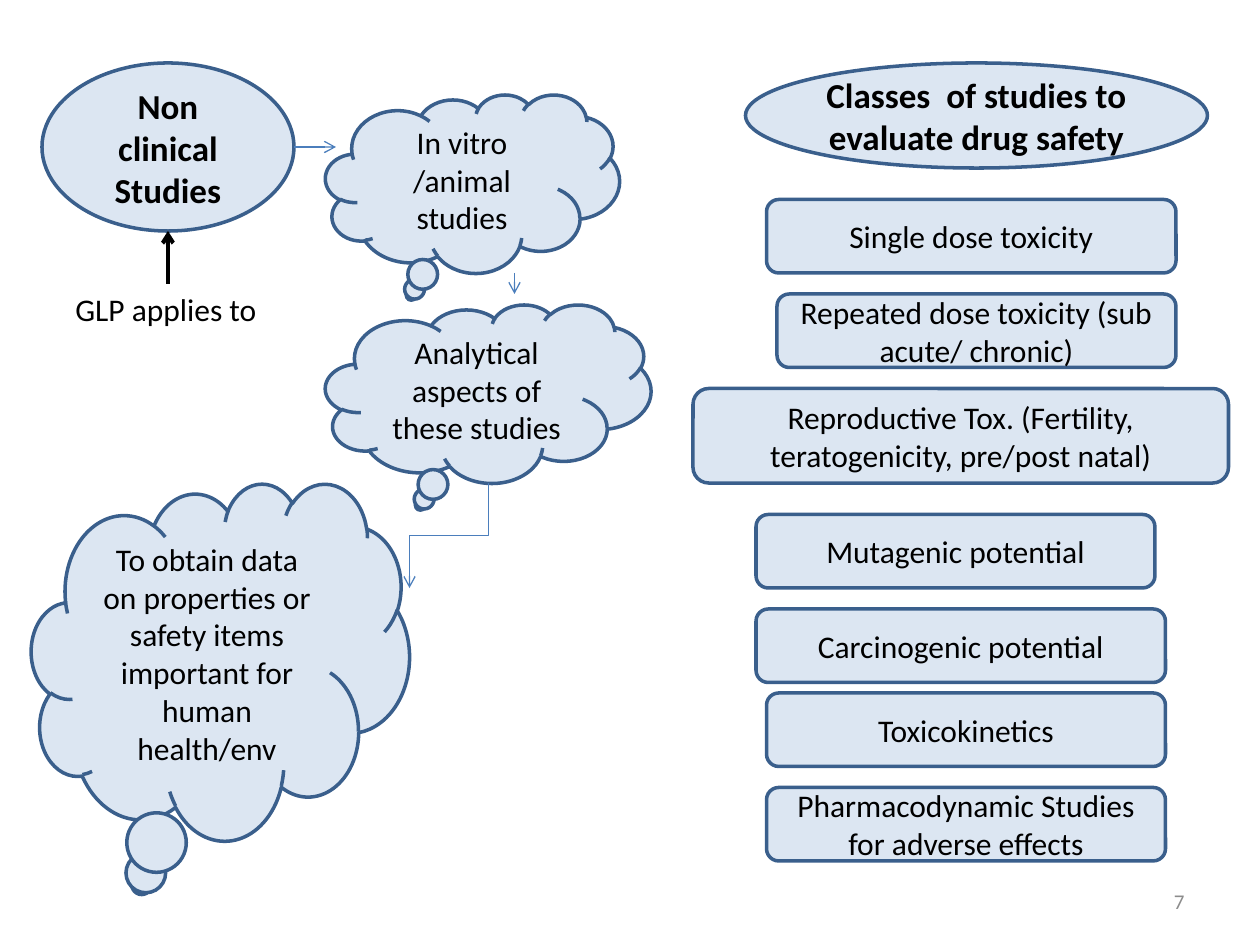
import pptx
import pptx.util
import pptx.dml.color
import pptx.enum.shapes
import pptx.enum.text
import pptx.oxml
from pptx.oxml.ns import nsdecls

Pt = pptx.util.Pt
SHAPE = pptx.enum.shapes.MSO_SHAPE
LINK = pptx.enum.shapes.MSO_CONNECTOR
ALIGN = pptx.enum.text.PP_ALIGN
ANCHOR = pptx.enum.text.MSO_ANCHOR

PALE, NAVY, BLUE, BLACK, GREY = "DCE6F2", "3A5F8C", "4B7EBC", "000000", "8C8C8C"
HEADING = {"size": Pt(20), "bold": True}
BODY = {"size": Pt(18)}

# text, left, top, width, height
HEADINGS = [
    ("Non clinical Studies", 24, 36, 144, 96),
    ("Classes  of studies to evaluate drug safety", 426, 36, 264, 60),
]
CLOUDS = [
    ("Analytical aspects of these studies", 186, 174, 186, 102),
    ("To obtain data on properties or safety items important for human health/env",
     18, 276, 216, 204),
    ("In vitro /animal studies", 186, 54, 168, 102),
]
STUDY_CLASSES = [
    ("Single dose toxicity", 438, 114, 234, 42),
    ("Repeated dose toxicity (sub acute/ chronic)", 444, 168, 228, 42),
    ("Reproductive Tox. (Fertility, teratogenicity, pre/post natal)", 396, 222, 306, 54),
    ("Mutagenic potential", 432, 294, 228, 42),
    ("Carcinogenic potential", 432, 348, 234, 42),
    ("Toxicokinetics", 438, 396, 228, 42),
    ("Pharmacodynamic Studies for adverse effects", 438, 450, 228, 42),
]
# start x, start y, end x, end y, colour, line width
ARROWS = [
    (168, 84, 192, 84, BLUE, 0.75),
    (294, 156, 294, 168, BLUE, 0.75),
    (96, 162, 96, 132, BLACK, 2.25),
]
ELBOW = (279, 276, 234, 336)


def rgb(value):
    return pptx.dml.color.RGBColor.from_string(value)


def write(sp, text, font, align, anchor, color=BLACK):
    tf = sp.text_frame
    tf.word_wrap = True
    tf.vertical_anchor = anchor
    p = tf.paragraphs[0]
    p.alignment = align
    r = p.add_run()
    r.text = text
    for name, value in {"name": "Calibri", **font}.items():
        setattr(r.font, name, value)
    r.font.color.rgb = rgb(color)


def add_box(s, kind, font, text, *place):
    sp = s.shapes.add_shape(kind, *map(Pt, place))
    sp.shadow.inherit = False
    sp.fill.solid()
    sp.fill.fore_color.rgb = rgb(PALE)
    sp.line.color.rgb = rgb(NAVY)
    sp.line.width = Pt(2)
    write(sp, text, font, ALIGN.CENTER, ANCHOR.MIDDLE)


def add_label(s, text, place, *style):
    write(s.shapes.add_textbox(*map(Pt, place)), text, *style)


def add_arrow(s, x1, y1, x2, y2, color=BLUE, width=0.75, kind=LINK.STRAIGHT):
    cn = s.shapes.add_connector(kind, *map(Pt, (x1, y1, x2, y2)))
    cn.line.color.rgb = rgb(color)
    cn.line.width = Pt(width)
    cn.line._get_or_add_ln().append(
        pptx.oxml.parse_xml(f'<a:tailEnd {nsdecls("a")} type="arrow"/>'))
    cn._element.spPr.append(pptx.oxml.parse_xml(f'<a:effectLst {nsdecls("a")}/>'))
    return cn


def add_down_elbow(s, x1, y1, x2, y2):
    """Elbow that leaves and arrives vertically: a horizontal one turned 90 degrees."""
    cx, cy = (x1 + x2) / 2, (y1 + y2) / 2
    half_w, half_h = (y2 - y1) / 2, (x1 - x2) / 2
    cn = add_arrow(s, cx - half_w, cy - half_h, cx + half_w, cy + half_h, kind=LINK.ELBOW)
    cn._element.spPr.xfrm.set("rot", "5400000")


def main():
    prs = pptx.Presentation()
    prs.slide_width, prs.slide_height = Pt(720), Pt(540)
    s = prs.slides.add_slide(prs.slide_layouts[6])
    for kind, font, boxes in [
        (SHAPE.OVAL, HEADING, HEADINGS),
        (SHAPE.CLOUD_CALLOUT, BODY, CLOUDS),
        (SHAPE.ROUNDED_RECTANGLE, BODY, STUDY_CLASSES),
    ]:
        for box in boxes:
            add_box(s, kind, font, *box)
    for arrow in ARROWS:
        add_arrow(s, *arrow)
    add_down_elbow(s, *ELBOW)
    add_label(s, "GLP applies to", (36, 162, 120, 29), BODY, ALIGN.LEFT, ANCHOR.TOP)
    add_label(s, "7", (516, 500.5, 168, 28.75), {"size": Pt(12)},
              ALIGN.RIGHT, ANCHOR.MIDDLE, GREY)
    prs.save("out.pptx")


if __name__ == "__main__":
    main()
